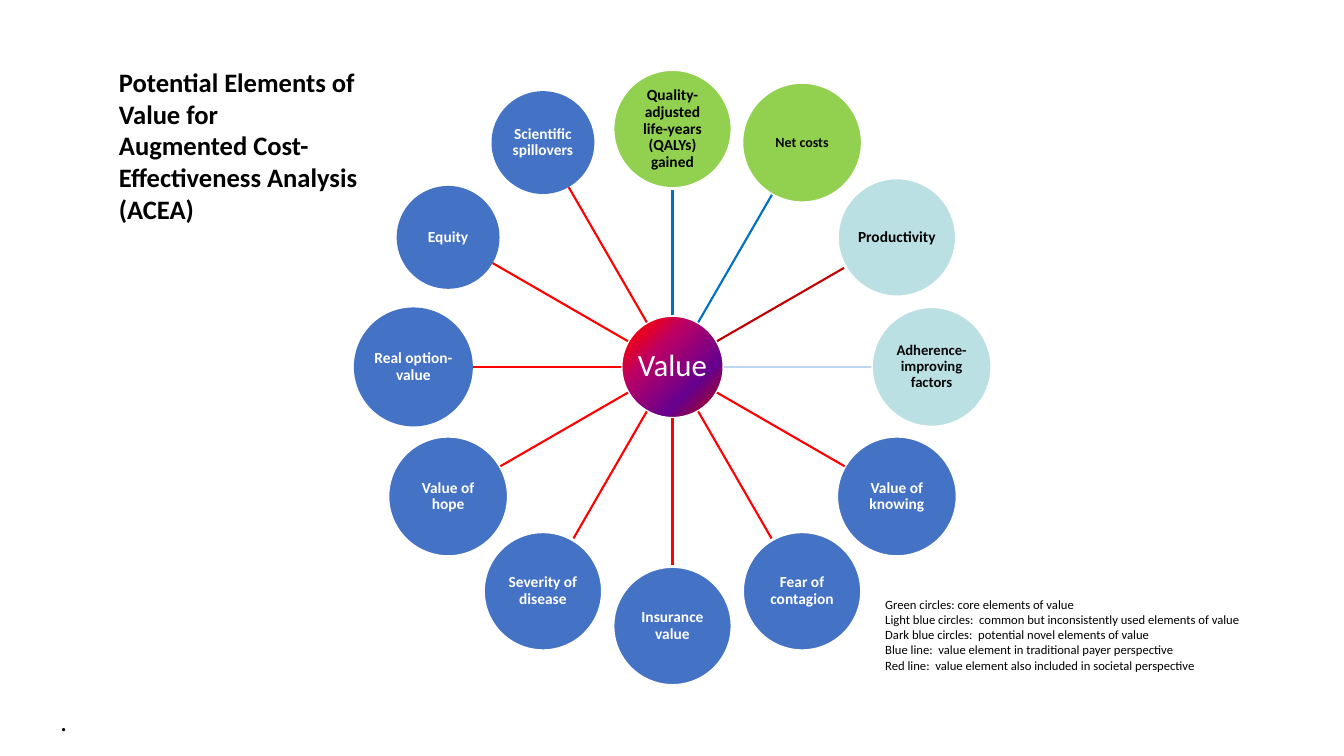
from dataclasses import dataclass
from math import cos, radians, sin

from lxml import etree
from pptx import Presentation
from pptx.dml.color import RGBColor
from pptx.enum.shapes import MSO_CONNECTOR as Connector, MSO_SHAPE as Shape
from pptx.enum.text import MSO_ANCHOR as Anchor, MSO_AUTO_SIZE as AutoSize, PP_ALIGN as Align
from pptx.oxml import parse_xml
from pptx.oxml.ns import nsdecls, qn
from pptx.util import Inches, Pt


@dataclass(frozen=True)
class Theme:
    font: str = "Calibri"
    black: str = "000000"
    white: str = "FFFFFF"
    ink: str = "070809"
    green: str = "92D050"
    light_blue: str = "BBE0E3"
    dark_blue: str = "4472C4"
    payer_line: str = "0070C0"
    societal_line: str = "FF0000"
    productivity_line: str = "C00000"
    adherence_line: str = "BDD7EE"
    hub_stops: tuple = ((0, "C00000"), (30, "66008F"), (65, "BA0066"), (90, "FF0000"), (100, "FF8200"))
    title_size: float = 19
    hub_size: float = 22
    label_size: float = 11
    adherence_size: float = 10.5
    costs_size: float = 10
    legend_size: float = 9
    spoke_width: float = 1.5


T = Theme()
CENTER_X, CENTER_Y = 6.67, 3.64
HUB = 1.02
RING = 2.57
LARGE, SMALL = 1.18, 1.02

TITLE = ["Potential Elements of Value for", "Augmented Cost-Effectiveness Analysis (ACEA)"]
LEGEND = [
    "Green circles: core elements of value",
    "Light blue circles:  common but inconsistently used elements of value",
    "Dark blue circles:  potential novel elements of value",
    "Blue line:  value element in traditional payer perspective",
    "Red line:  value element also included in societal perspective",
]
CORE = dict(fill=T.green, color=T.black, spoke=T.payer_line)
COMMON = dict(fill=T.light_blue, color=T.black, spoke=T.productivity_line)
NOVEL = dict(fill=T.dark_blue, color=T.white, spoke=T.societal_line)
ELEMENTS = [
    ("Quality-adjusted life-years (QALYs) gained", CORE | dict(ring=2.36, outline=2)),
    ("Net costs", CORE | dict(color=T.ink, size=T.costs_size, outline=1)),
    ("Productivity", COMMON | dict(outline=2)),
    ("Adherence-improving factors",
     COMMON | dict(color=T.ink, spoke=T.adherence_line, size=T.adherence_size, outline=1)),
    ("Value of knowing", NOVEL | dict(outline=1)),
    ("Fear of contagion", NOVEL | dict(outline=2)),
    ("Insurance value", NOVEL | dict(outline=2)),
    ("Severity of disease", NOVEL | dict(outline=2)),
    ("Value of hope", NOVEL | dict(outline=1)),
    ("Real option-value", NOVEL),
    ("Equity", NOVEL | dict(diameter=SMALL)),
    ("Scientific spillovers", NOVEL | dict(diameter=SMALL)),
]


def rgb(value):
    return RGBColor.from_string(value)


def write(sp, lines, size, color=T.black, bold=False, align=Align.LEFT,
          anchor=Anchor.TOP, spacing=1.0, margins=(0.1, 0.05)):
    tf = sp.text_frame
    tf.word_wrap = True
    tf.auto_size = AutoSize.NONE
    tf.vertical_anchor = anchor
    tf.margin_left = tf.margin_right = Inches(margins[0])
    tf.margin_top = tf.margin_bottom = Inches(margins[1])
    for i, line in enumerate(lines):
        p = tf.add_paragraph() if i else tf.paragraphs[0]
        p.alignment = align
        p.line_spacing = spacing
        p.space_before = p.space_after = Pt(0)
        r = p.add_run()
        r.text = line
        r.font.name = T.font
        r.font.size = Pt(size)
        r.font.bold = bold
        r.font.color.rgb = rgb(color)


def place(sp, left, top, width, height):
    sp.left, sp.top = Inches(left), Inches(top)
    sp.width, sp.height = Inches(width), Inches(height)


def remove_bullets(sp):
    for p in sp.text_frame.paragraphs:
        props = p._p.get_or_add_pPr()
        props.set("marL", "0")
        props.set("indent", "0")
        etree.SubElement(props, qn("a:buNone"))


def on_spoke(angle, distance):
    return CENTER_X + distance * sin(angle), CENTER_Y - distance * cos(angle)


def add_circle(s, x, y, diameter, label, size, color, fill=None, outline=0, **text_format):
    sp = s.shapes.add_shape(Shape.OVAL, Inches(x - diameter / 2), Inches(y - diameter / 2),
                            Inches(diameter), Inches(diameter))
    sp.shadow.inherit = False
    if fill:
        sp.fill.solid()
        sp.fill.fore_color.rgb = rgb(fill)
    if outline:
        sp.line.color.rgb = rgb(T.white)
        sp.line.width = Pt(outline)
    else:
        sp.line.fill.background()
    write(sp, [label], size, color, align=Align.CENTER, anchor=Anchor.MIDDLE,
          spacing=0.9, **text_format)
    return sp


def add_spoke(s, angle, end, color):
    points = on_spoke(angle, HUB / 2) + on_spoke(angle, end)
    line = s.shapes.add_connector(Connector.STRAIGHT, *map(Inches, points))
    line.line.color.rgb = rgb(color)
    line.line.width = Pt(T.spoke_width)
    etree.SubElement(line._element.spPr, qn("a:effectLst"))


def add_element(s, angle, label, fill, color, spoke, ring=RING, diameter=LARGE,
                size=T.label_size, outline=0):
    add_spoke(s, angle, ring - diameter / 2, spoke)
    x, y = on_spoke(angle, ring)
    add_circle(s, x, y, diameter, label, size, color, fill, outline,
               bold=True, margins=(0.01, 0.01))


def add_hub(s):
    sp = add_circle(s, CENTER_X, CENTER_Y, HUB, "Value", T.hub_size, T.white,
                    outline=2, margins=(0, 0))
    stops = "".join(f'<a:gs pos="{pos * 1000}"><a:srgbClr val="{color}"/></a:gs>'
                    for pos, color in T.hub_stops)
    gradient = parse_xml(
        f'<a:gradFill {nsdecls("a")} rotWithShape="1"><a:gsLst>{stops}</a:gsLst>'
        '<a:path path="circle"><a:fillToRect l="100000" t="100000"/></a:path></a:gradFill>')
    sp._element.spPr.find(qn("a:prstGeom")).addnext(gradient)


def main():
    prs = Presentation()
    prs.slide_width, prs.slide_height = Inches(13.33), Inches(7.5)
    s = prs.slides.add_slide(prs.slide_layouts[1])

    title, legend = s.placeholders
    place(title, 1.08, 0.6, 2.9, 1.7)
    write(title, TITLE, T.title_size, bold=True)
    place(legend, 8.68, 5.87, 3.8, 0.86)
    write(legend, LEGEND, T.legend_size)
    remove_bullets(legend)

    add_hub(s)
    step = 360 / len(ELEMENTS)
    for i, (label, style) in enumerate(ELEMENTS):
        add_element(s, radians(i * step), label, **style)

    dot = s.shapes.add_textbox(Inches(0.5), Inches(6.94), Inches(10.17), Inches(0.42))
    write(dot, ["."], T.title_size)
    prs.save("out.pptx")


if __name__ == "__main__":
    main()
